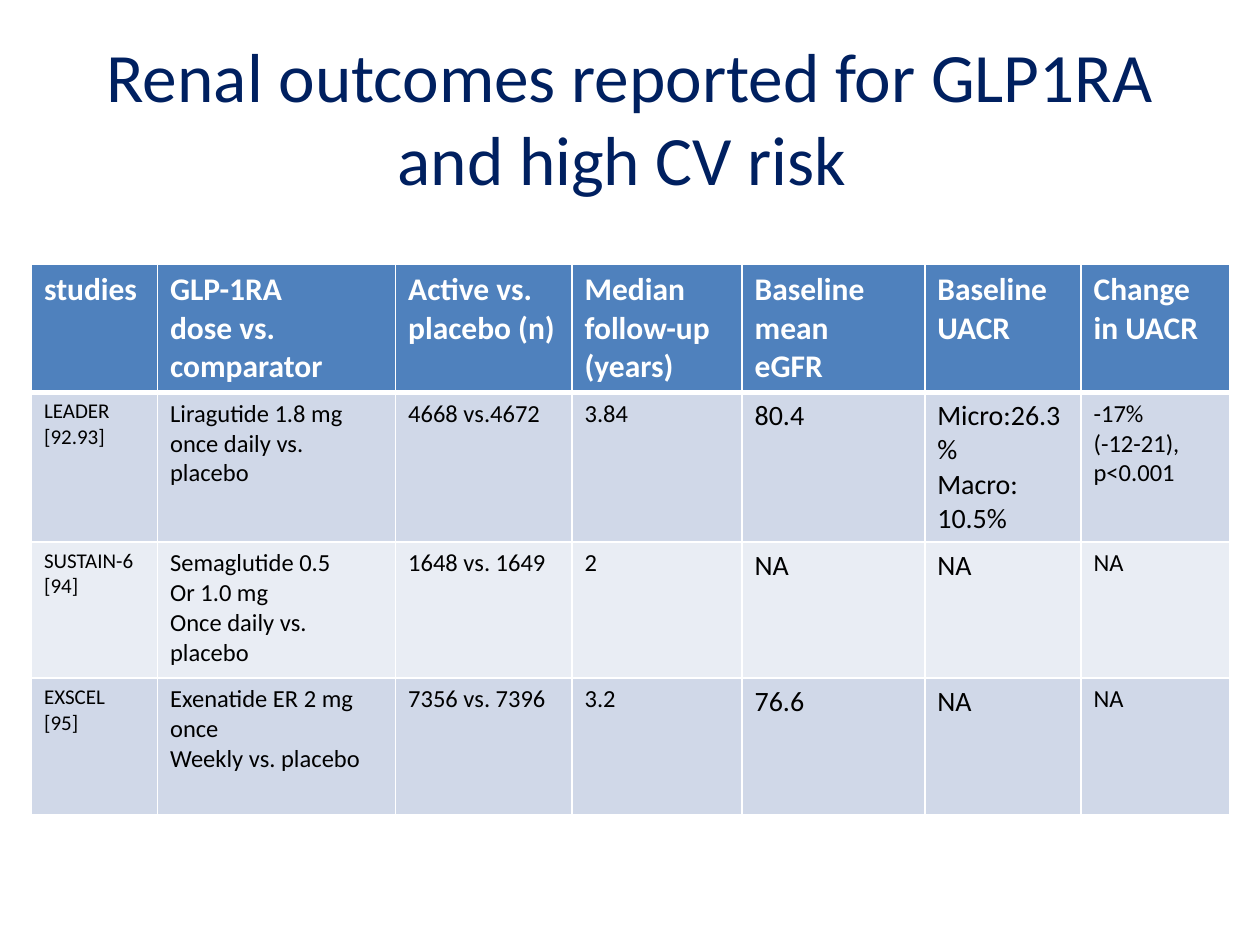
import pptx
import pptx.dml.color
import pptx.enum.text
import pptx.oxml
import pptx.oxml.ns
import pptx.util
from pptx.util import Inches

WHITE, BLACK, NAVY = "FFFFFF", "000000", "002060"
HEADER_FILL, BAND_FILLS = "4F81BD", ("D0D8E8", "E9EDF4")
LEFT = pptx.enum.text.PP_ALIGN.LEFT
CENTER = pptx.enum.text.PP_ALIGN.CENTER

COLUMN_WIDTHS = (1, 1.89, 1.4, 1.35, 1.45, 1.24, 1.18)
ROW_HEIGHTS = (1.01, 1.08, 1.08, 1.08)
HEADER_SIZES = (18,) * 7
BODY_SIZES = (12, 14, 14, 14, 16, 16, 14)

# A line break inside a cell starts a new paragraph.
ROWS = (
    ("studies", "GLP-1RA \ndose vs. comparator", "Active vs. placebo (n)",
     "Median follow-up (years)", "Baseline mean\neGFR", "Baseline UACR",
     "Change in UACR"),
    ("LEADER\n[92.93]", "Liragutide 1.8 mg \nonce daily vs. placebo",
     "4668 vs.4672", "3.84", "80.4", "Micro:26.3%\nMacro: 10.5%",
     "-17%\n(-12-21), p<0.001"),
    ("SUSTAIN-6\n[94]", "Semaglutide 0.5\nOr 1.0 mg\nOnce daily vs. placebo",
     "1648 vs. 1649", "2", "NA", "NA", "NA"),
    ("EXSCEL\n[95]", "Exenatide ER 2 mg once\nWeekly vs. placebo",
     "7356 vs. 7396", "3.2", "76.6", "NA", "NA"),
)


def color(hex_text):
    return pptx.dml.color.RGBColor.from_string(hex_text)


class SlideBuilder:
    font_name = "Calibri"

    def __init__(self, page):
        self.page = page

    def set_text(self, frame, text, size, hex_text, bold=False, align=LEFT):
        frame.word_wrap = True
        frame.text = text
        for paragraph in frame.paragraphs:
            paragraph.alignment = align
            font = paragraph.font
            font.name, font.bold = self.font_name, bold
            font.size = pptx.util.Pt(size)
            font.color.rgb = color(hex_text)

    def title(self, text, left, top, width, height):
        box = self.page.shapes.add_textbox(
            Inches(left), Inches(top), Inches(width), Inches(height))
        box.text_frame.vertical_anchor = pptx.enum.text.MSO_ANCHOR.MIDDLE
        self.set_text(box.text_frame, text, 39.6, NAVY, align=CENTER)

    def borders(self, cell, widths):
        """Draw white cell borders; widths maps side letters to points."""
        properties = cell._tc.get_or_add_tcPr()
        for index, side in enumerate("LRTB"):
            line = pptx.oxml.parse_xml(
                f'<a:ln{side} {pptx.oxml.ns.nsdecls("a")} '
                f'w="{pptx.util.Pt(widths[side])}"><a:solidFill>'
                f'<a:srgbClr val="{WHITE}"/></a:solidFill></a:ln{side}>')
            properties.insert(index, line)

    def table(self, rows, left, top):
        table = self.page.shapes.add_table(
            len(rows), len(COLUMN_WIDTHS), Inches(left), Inches(top),
            Inches(sum(COLUMN_WIDTHS)), Inches(sum(ROW_HEIGHTS))).table
        for column, width in zip(table.columns, COLUMN_WIDTHS):
            column.width = Inches(width)
        for row, height in zip(table.rows, ROW_HEIGHTS):
            row.height = Inches(height)
        for row_index, texts in enumerate(rows):
            header = row_index == 0
            fill = HEADER_FILL if header else BAND_FILLS[(row_index - 1) % 2]
            sizes = HEADER_SIZES if header else BODY_SIZES
            widths = {"L": 1, "R": 1, "T": 3 if row_index == 1 else 1,
                      "B": 3 if header else 1}
            for column_index, (text, size) in enumerate(zip(texts, sizes)):
                cell = table.cell(row_index, column_index)
                cell.fill.solid()
                cell.fill.fore_color.rgb = color(fill)
                self.borders(cell, widths)
                self.set_text(cell.text_frame, text, size,
                              WHITE if header else BLACK, bold=header)


def main():
    deck = pptx.Presentation()
    deck.slide_width, deck.slide_height = Inches(10), Inches(7.5)
    builder = SlideBuilder(deck.slides.add_slide(deck.slide_layouts[6]))
    builder.table(ROWS, 0.25, 2.1)
    builder.title("Renal outcomes reported for GLP1RA and high CV risk ",
                  0.5, 0.3, 9, 1.25)
    deck.save("out.pptx")


if __name__ == "__main__":
    main()
